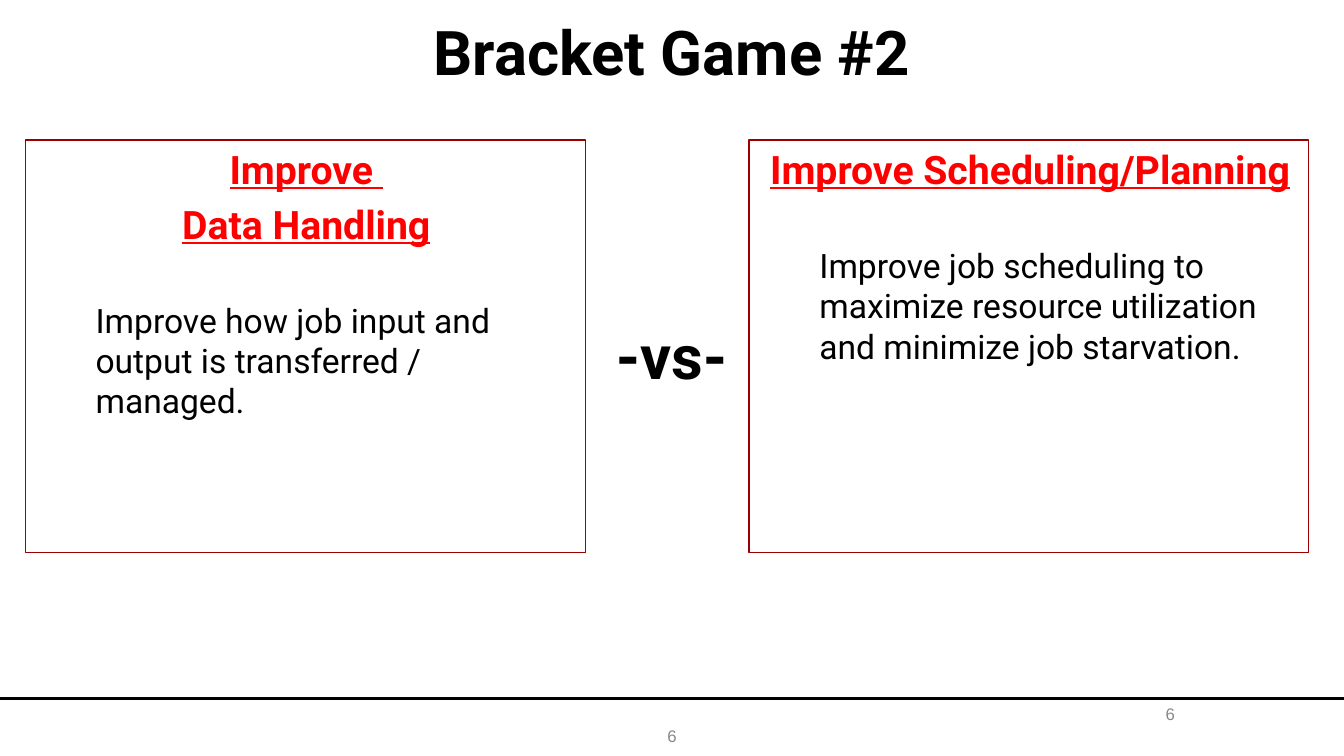
"""Build the "Bracket Game #2" slide: two improvement options set against each other."""
from pptx import Presentation, util as u
from pptx.dml.color import RGBColor
from pptx.enum import shapes, text

TITLE = "Bracket Game #2"
VERSUS = "-vs-"
PAGE_NUMBER = "6"
OPTIONS = [
    (["Improve ", "Data Handling"],
     "Improve how job input and output is transferred / managed."),
    (["Improve Scheduling/Planning"],
     "Improve job scheduling to maximize resource utilization and minimize job starvation."),
]

THEME = {
    "rule": "000000",
    "border": "990000",
    "display": dict(name="Roboto", size=44, color="000000", bold=True),
    "heading": dict(name="Roboto", size=28, color="FF0000", bold=True, underline=True),
    "description": dict(name="Roboto", size=24, color="000000"),
    "page": dict(name="Arial", size=12, color="888888"),
}

WIDTH, HEIGHT = 960, 540
RULE_Y = 499
CARD_LEFT, CARD_TOP, CARD_WIDTH, CARD_HEIGHT = 18, 100, 400, 294.5
CARD_PITCH = 517
HEADING_GAP, DESCRIPTION_GAP = 5.6, 37.7
HEADING_INDENT, DESCRIPTION_INDENT = 1.44, 43.2

LABELS = [
    (TITLE, "display", (0, 0, WIDTH, 72)),
    (VERSUS, "display", (425.5, 217.5, 109.5, 72)),
    (PAGE_NUMBER, "page", (368, 511, 224, 29)),
    (PAGE_NUMBER, "page", (784, 492, 104, 36)),
]


def points(values):
    return [u.Pt(value) for value in values]


def write(paragraph, words, style, align, before=0, indent=0):
    paragraph.alignment = align
    paragraph.space_before = u.Pt(before)
    properties = paragraph._p.get_or_add_pPr()
    properties.set("marL", str(int(u.Pt(indent))))
    properties.set("indent", "0")
    run = paragraph.add_run()
    run.text = words
    for key, value in THEME[style].items():
        if key == "color":
            run.font.color.rgb = RGBColor.from_string(value)
        else:
            setattr(run.font, key, u.Pt(value) if key == "size" else value)


def add_label(slide, words, style, box):
    frame = slide.shapes.add_textbox(*points(box)).text_frame
    frame.word_wrap = True
    frame.vertical_anchor = text.MSO_ANCHOR.MIDDLE
    write(frame.paragraphs[0], words, style, text.PP_ALIGN.CENTER)


def add_option(slide, position, headings, description):
    box = (CARD_LEFT + position * CARD_PITCH, CARD_TOP, CARD_WIDTH, CARD_HEIGHT)
    card = slide.shapes.add_shape(shapes.MSO_SHAPE.RECTANGLE, *points(box))
    card.shadow.inherit = False
    card.fill.background()
    card.line.color.rgb = RGBColor.from_string(THEME["border"])
    card.line.width = u.Pt(0.75)
    frame = card.text_frame
    frame.word_wrap = True
    frame.vertical_anchor = text.MSO_ANCHOR.TOP
    for row, heading in enumerate(headings):
        paragraph = frame.add_paragraph() if row else frame.paragraphs[0]
        write(paragraph, heading, "heading", text.PP_ALIGN.CENTER,
              HEADING_GAP if row else 0, HEADING_INDENT)
    write(frame.add_paragraph(), description, "description", text.PP_ALIGN.LEFT,
          DESCRIPTION_GAP, DESCRIPTION_INDENT)


def add_rule(slide):
    rule = slide.shapes.add_connector(
        shapes.MSO_CONNECTOR.STRAIGHT, *points((0, RULE_Y, WIDTH, RULE_Y)))
    rule.line.color.rgb = RGBColor.from_string(THEME["rule"])
    rule.line.width = u.Pt(2.25)
    properties = rule._element.spPr
    properties.append(properties.makeelement(
        "{http://schemas.openxmlformats.org/drawingml/2006/main}effectLst", {}))


def main():
    deck = Presentation()
    deck.slide_width, deck.slide_height = points((WIDTH, HEIGHT))
    slide = deck.slides.add_slide(deck.slide_layouts[6])
    add_rule(slide)
    for label in LABELS:
        add_label(slide, *label)
    for position, option in enumerate(OPTIONS):
        add_option(slide, position, *option)
    deck.save("out.pptx")


if __name__ == "__main__":
    main()
